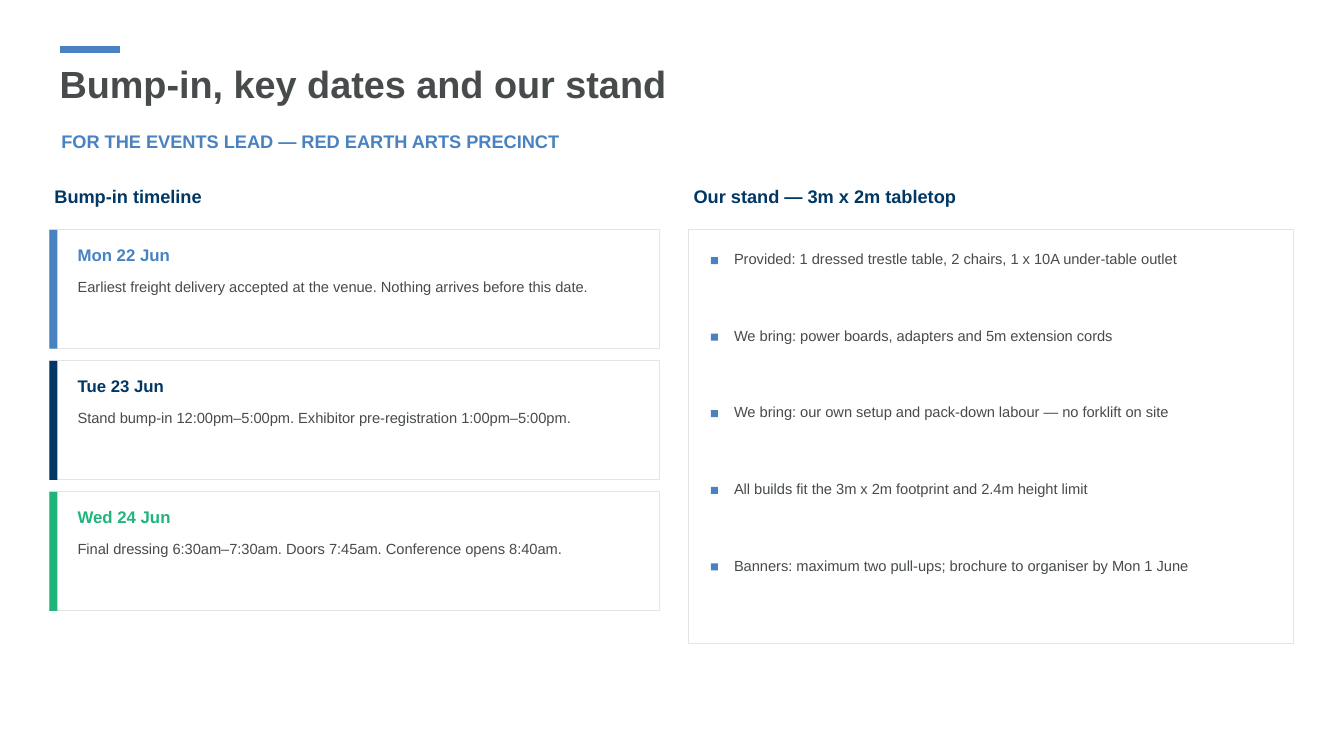
"""Build the bump-in, key dates and stand slide."""
from dataclasses import dataclass

from lxml import etree
from pptx import Presentation, util as u
from pptx.dml.color import RGBColor
from pptx.enum import shapes, text


@dataclass(frozen=True)
class Theme:
    """Colours, type sizes and font of the slide."""
    font: str = "Arial"
    ink: str = "474B4C"
    blue: str = "4982C0"
    navy: str = "003764"
    green: str = "20B47A"
    accent: str = "4A82C1"
    border: str = "E4E4E3"
    white: str = "FFFFFF"
    title: float = 27
    heading: float = 13
    label: float = 12
    body: float = 10.5


class SlideBuilder:
    """Draws elements on a grid of tenth-inch columns and rows."""

    CELL = u.Inches(0.1)
    TIGHT = (0.5, 0.2)
    ROOMY = (1, 0.5)

    def __init__(self, deck, theme):
        """Add a title-only slide to the deck."""
        self.theme = theme
        self.page = deck.slides.add_slide(deck.slide_layouts[5])

    def cells(self, *counts):
        """Turn counts of columns or rows into lengths."""
        return [round(count * self.CELL) for count in counts]

    def fill_text(self, box, words, size, color, bold, insets, spacing=None):
        """Fill a box with one formatted paragraph."""
        frame = box.text_frame
        frame.word_wrap = True
        across, down = self.cells(*insets)
        frame.margin_left = frame.margin_right = across
        frame.margin_top = frame.margin_bottom = down
        para = frame.paragraphs[0]
        para.alignment = text.PP_ALIGN.LEFT
        if spacing:
            para.line_spacing = spacing
        span = para.add_run()
        span.text = words
        span.font.name = self.theme.font
        span.font.size = u.Pt(size)
        span.font.bold = bold
        span.font.color.rgb = RGBColor.from_string(color)
        return frame

    def title(self, words, left, top, width, height):
        """Place and format the title placeholder."""
        box = self.page.shapes.title
        box.left, box.top, box.width, box.height = self.cells(left, top, width, height)
        frame = self.fill_text(
            box, words, self.theme.title, self.theme.ink, True, self.ROOMY, 1.1)
        frame.vertical_anchor = text.MSO_ANCHOR.MIDDLE
        frame.auto_size = text.MSO_AUTO_SIZE.NONE

    def subtitle(self, words, left, top, width, height):
        """Add the line below the title."""
        box = self.page.shapes.add_textbox(*self.cells(left, top, width, height))
        self.fill_text(box, words, self.theme.heading, self.theme.blue, True, self.ROOMY, 1.1)

    def label(self, words, left, top, width, height, size, color, bold=False):
        """Add a text box that grows with its text."""
        box = self.page.shapes.add_textbox(*self.cells(left, top, width, height))
        frame = self.fill_text(box, words, size, color, bold, self.TIGHT)
        frame.auto_size = text.MSO_AUTO_SIZE.SHAPE_TO_FIT_TEXT

    def heading(self, words, left, top):
        """Add a column heading."""
        self.label(words, left, top, 60, 3, self.theme.heading, self.theme.navy, True)

    def block(self, left, top, width, height, fill, border=None):
        """Add a filled rectangle with an optional border."""
        box = self.page.shapes.add_shape(
            shapes.MSO_SHAPE.RECTANGLE, *self.cells(left, top, width, height))
        box.shadow.inherit = False
        box.fill.solid()
        box.fill.fore_color.rgb = RGBColor.from_string(fill)
        if border:
            box.line.color.rgb = RGBColor.from_string(border)
            box.line.width = u.Pt(0.75)
        else:
            box.line.fill.background()

    def rule(self, left, right, top):
        """Add the thick accent line."""
        connector = self.page.shapes.add_connector(
            shapes.MSO_CONNECTOR.STRAIGHT, *self.cells(left, top, right, top))
        connector.line.color.rgb = RGBColor.from_string(self.theme.accent)
        connector.line.width = u.Pt(4.5)
        properties = connector.element.spPr
        namespace = properties.nsmap["a"]
        etree.SubElement(properties, f"{{{namespace}}}effectLst")

    def card(self, day, detail, color, left, top):
        """Add a timeline card with a coloured edge."""
        self.block(left, top, 60.5, 11.8, self.theme.white, self.theme.border)
        self.block(left, top, 0.8, 11.8, color)
        inner = left + 2.3
        self.label(day, inner, top + 1.3, 56, 3, self.theme.label, color, True)
        self.label(detail, inner, top + 4.6, 57, 6.6, self.theme.body, self.theme.ink)

    def checklist(self, items, left, top):
        """Add a bordered panel of items with square markers."""
        self.block(left, top, 60, 41, self.theme.white, self.theme.border)
        for row, item in enumerate(items):
            line_top = top + 1.8 + row * 7.6
            self.block(left + 2.2, line_top + 0.9, 0.7, 0.7, self.theme.blue)
            self.label(item, left + 4, line_top, 54.5, 6.6, self.theme.body, self.theme.ink)


def main():
    """Build and save the deck."""
    deck = Presentation()
    deck.slide_width, deck.slide_height = u.Inches(13.33), u.Inches(7.5)
    theme = Theme()
    slide = SlideBuilder(deck, theme)
    left, right, heading_top, content_top = 4.9, 68.3, 18.2, 22.8

    slide.rule(6, 11.9, 4.9)
    slide.title("Bump-in, key dates and our stand", left, 3.8, 105.5, 8.4)
    slide.subtitle("FOR THE EVENTS LEAD — RED EARTH ARTS PRECINCT", 5.1, 12.2, 105.5, 4.4)

    slide.heading("Bump-in timeline", left, heading_top)
    timeline = [
        ("Mon 22 Jun", theme.blue,
         "Earliest freight delivery accepted at the venue. Nothing arrives before this date."),
        ("Tue 23 Jun", theme.navy,
         "Stand bump-in 12:00pm–5:00pm. Exhibitor pre-registration 1:00pm–5:00pm."),
        ("Wed 24 Jun", theme.green,
         "Final dressing 6:30am–7:30am. Doors 7:45am. Conference opens 8:40am."),
    ]
    for row, (day, color, detail) in enumerate(timeline):
        slide.card(day, detail, color, left, content_top + row * 13)

    slide.heading("Our stand — 3m x 2m tabletop", right, heading_top)
    slide.checklist([
        "Provided: 1 dressed trestle table, 2 chairs, 1 x 10A under-table outlet",
        "We bring: power boards, adapters and 5m extension cords",
        "We bring: our own setup and pack-down labour — no forklift on site",
        "All builds fit the 3m x 2m footprint and 2.4m height limit",
        "Banners: maximum two pull-ups; brochure to organiser by Mon 1 June",
    ], right, content_top)
    deck.save("out.pptx")


if __name__ == "__main__":
    main()
